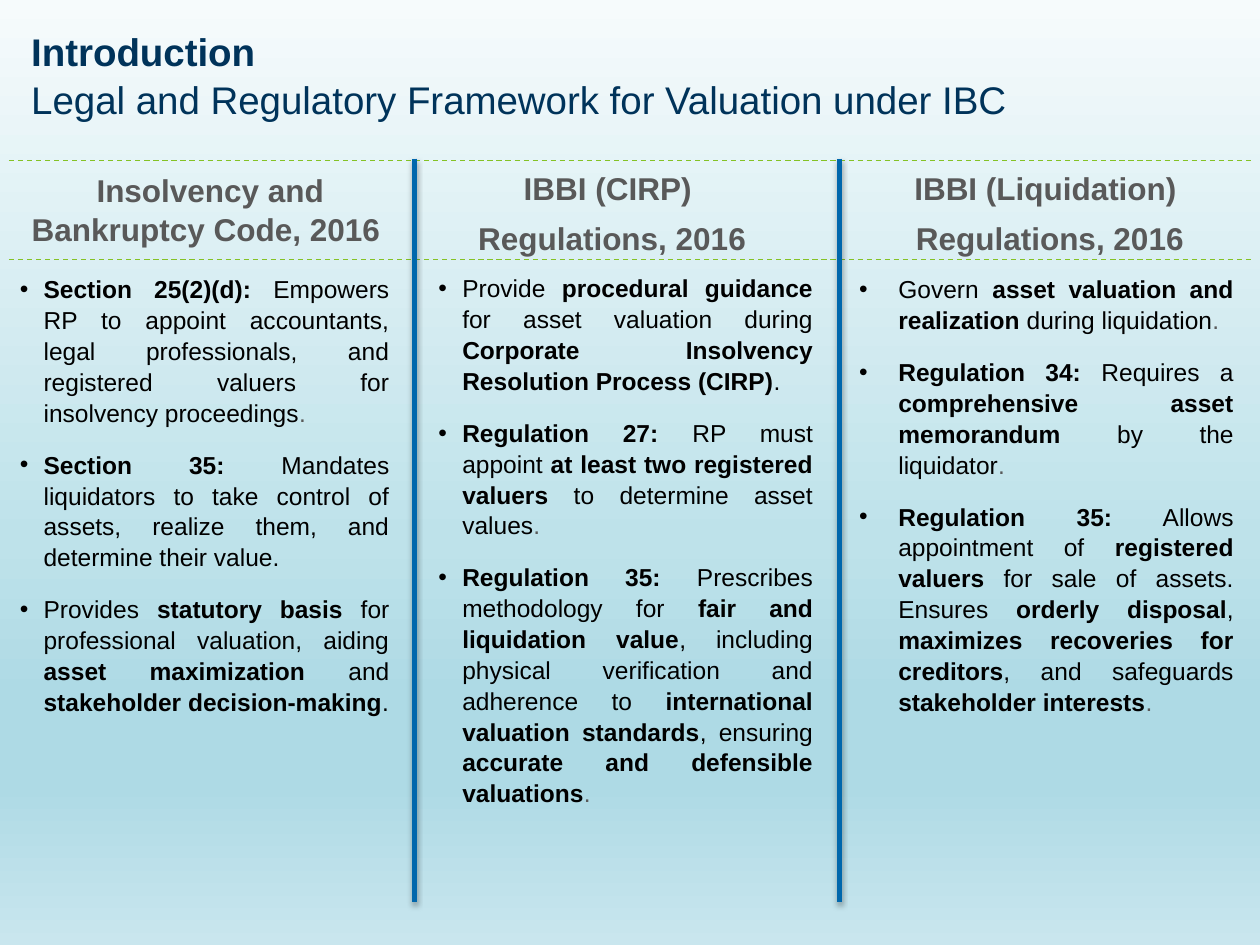
"""Build a slide on the legal framework for valuation under the IBC."""
from lxml.etree import SubElement
from pptx import Presentation
from pptx.dml.color import RGBColor
from pptx.enum.dml import MSO_LINE
from pptx.enum.shapes import MSO_CONNECTOR
from pptx.enum.text import MSO_ANCHOR, MSO_AUTO_SIZE, PP_ALIGN
from pptx.oxml.ns import qn
from pptx.util import Cm, Pt

FONT = "Arial"
NAVY = RGBColor(0x00, 0x33, 0x5A)
BLUE = RGBColor(0x00, 0x67, 0xAC)
GREEN = RGBColor(0x84, 0xC2, 0x25)
GREY = RGBColor(0x59, 0x59, 0x59)
BLACK = RGBColor(0x00, 0x00, 0x00)
BACKGROUND = [
    (0, RGBColor(0xF6, 0xFB, 0xFC)),
    (57, RGBColor(0xBE, 0xE2, 0xEA)),
    (74, RGBColor(0xAE, 0xDA, 0xE5)),
    (83, RGBColor(0xAE, 0xDA, 0xE5)),
    (100, RGBColor(0xC9, 0xE6, 0xEE)),
]
TITLE = ["Introduction", "Legal and Regulatory Framework for Valuation under IBC"]

# Bold text stands between ** marks; a closing ~. is a grey full stop.
COLUMNS = [
    {
        "heading": ["Insolvency and Bankruptcy Code, 2016 "],
        "heading_box": (0.38, 3.28, 7.72, 2.69),
        "wrap": True,
        "body_box": (0.15, 5.38, 7.95, 8.89),
        "indent": 0.48,
        "points": [
            "**Section 25(2)(d):** Empowers RP to appoint accountants, legal professionals, "
            "and registered valuers for insolvency proceedings~.",
            "**Section 35:** Mandates liquidators to take control of assets, realize them, "
            "and determine their value.",
            "Provides **statutory basis** for professional valuation, aiding "
            "**asset maximization** and **stakeholder decision-making**.",
        ],
    },
    {
        "heading": ["IBBI (CIRP) ", "Regulations, 2016"],
        "heading_box": (7.77, 3.25, 9.14, 2.01),
        "wrap": True,
        "body_box": (8.59, 5.36, 8.05, 12.32),
        "indent": 0.48,
        "points": [
            "Provide **procedural guidance** for asset valuation during "
            "**Corporate Insolvency Resolution Process (CIRP)**.",
            "**Regulation 27:** RP must appoint **at least two registered valuers** "
            "to determine asset values~.",
            "**Regulation 35:** Prescribes methodology for **fair and liquidation value**, "
            "including physical verification and adherence to "
            "**international valuation standards**, ensuring "
            "**accurate and defensible valuations**~.",
        ],
    },
    {
        "heading": ["IBBI (Liquidation) ", "Regulations, 2016"],
        "heading_box": (18.14, 3.25, 6.05, 2.01),
        "wrap": False,
        "body_box": (17.07, 5.38, 8.05, 8.89),
        "indent": 0.79,
        "points": [
            "Govern **asset valuation and realization** during liquidation~.",
            "**Regulation 34:** Requires a **comprehensive asset memorandum** "
            "by the liquidator~.",
            "**Regulation 35:** Allows appointment of **registered valuers** for sale of "
            "assets. Ensures **orderly disposal**, **maximizes recoveries for creditors**, "
            "and safeguards **stakeholder interests**~.",
        ],
    },
]


def set_background(s):
    """Fill the slide background with a vertical gradient."""
    fill = s.background.fill
    fill.gradient()
    grad = s.background._cSld.find(".//" + qn("a:gradFill"))
    for child in list(grad):
        grad.remove(child)
    stops = SubElement(grad, qn("a:gsLst"))
    for position, color in BACKGROUND:
        stop = SubElement(stops, qn("a:gs"), pos=str(position * 1000))
        SubElement(stop, qn("a:srgbClr"), val=str(color))
    SubElement(grad, qn("a:lin"), ang="5400000", scaled="0")


def add_line(s, x1, y1, x2, y2, color, width):
    """Add a straight line and return it with its empty effect list."""
    line = s.shapes.add_connector(
        MSO_CONNECTOR.STRAIGHT, Cm(x1), Cm(y1), Cm(x2), Cm(y2)
    )
    line.line.color.rgb = color
    line.line.width = Pt(width)
    return line, SubElement(line._element.spPr, qn("a:effectLst"))


def add_rule(s, y):
    """Add a dashed horizontal rule."""
    line, _ = add_line(s, 0.18, y, 25.22, y, GREEN, 0.75)
    line.line.dash_style = MSO_LINE.DASH


def add_divider(s, x):
    """Add a thick column divider with a soft shadow."""
    _, effects = add_line(s, x, 3.2, x, 18.19, BLUE, 3)
    shadow = SubElement(
        effects, qn("a:outerShdw"), blurRad=str(Pt(3.1)), dist=str(Pt(1.8)),
        dir="5400000", rotWithShape="0",
    )
    color = SubElement(shadow, qn("a:srgbClr"), val=str(BLACK))
    SubElement(color, qn("a:alpha"), val="35000")


def add_text_box(s, box, wrap=True):
    """Add an empty text box and return its text frame."""
    tf = s.shapes.add_textbox(*map(Cm, box)).text_frame
    tf.word_wrap = wrap
    tf.auto_size = MSO_AUTO_SIZE.SHAPE_TO_FIT_TEXT
    return tf


def style_run(r, size, color, bold):
    """Set the font of a run."""
    r.font.name = FONT
    r.font.size = Pt(size)
    r.font.color.rgb = color
    r.font.bold = bold


def add_title(s):
    """Add the two-line title."""
    tf = add_text_box(s, (0.38, 0.1, 24.61, 2.79))
    tf.auto_size = MSO_AUTO_SIZE.NONE
    tf.vertical_anchor = MSO_ANCHOR.MIDDLE
    tf.text = "\n".join(TITLE)
    for p, bold in zip(tf.paragraphs, (True, False)):
        p.line_spacing = 1.05
        style_run(p.runs[0], 22, NAVY, bold)


def add_heading(s, column):
    """Add the centred heading of a column."""
    tf = add_text_box(s, column["heading_box"], column["wrap"])
    tf.text = "\n".join(column["heading"])
    for p in tf.paragraphs:
        p.alignment = PP_ALIGN.CENTER
        p.line_spacing = 1.05
        p.space_after = Pt(6)
        style_run(p.runs[0], 18, GREY, True)


def add_bullet(p, indent):
    """Give a paragraph a hanging bullet."""
    pPr = p._p.get_or_add_pPr()
    pPr.set("marL", str(Cm(indent)))
    pPr.set("indent", str(-Cm(indent)))
    SubElement(pPr, qn("a:buFont"), typeface=FONT)
    SubElement(pPr, qn("a:buChar"), char="•")


def add_run(p, text, color, bold):
    """Append a body run, skipping empty text."""
    if text:
        r = p.add_run()
        r.text = text
        style_run(r, 14, color, bold)


def add_points(s, column):
    """Add the justified bullet list of a column."""
    tf = add_text_box(s, column["body_box"])
    points = column["points"]
    for i, point in enumerate(points):
        p = tf.add_paragraph() if i else tf.paragraphs[0]
        add_bullet(p, column["indent"])
        p.alignment = PP_ALIGN.JUSTIFY
        p.line_spacing = 1.05
        p.space_after = Pt(6 if point is points[-1] else 12)
        main_text, _, grey_stop = point.partition("~")
        for j, part in enumerate(main_text.split("**")):
            add_run(p, part, BLACK, j % 2 == 1)
        add_run(p, grey_stop, GREY, False)


def main():
    """Build and save the slide."""
    prs = Presentation()
    prs.slide_width, prs.slide_height = Cm(25.4), Cm(19.05)
    s = prs.slides.add_slide(prs.slide_layouts[6])
    set_background(s)
    add_title(s)
    for y in (3.23, 5.23):
        add_rule(s, y)
    for x in (8.36, 16.92):
        add_divider(s, x)
    for column in COLUMNS:
        add_heading(s, column)
        add_points(s, column)
    prs.save("out.pptx")


if __name__ == "__main__":
    main()
